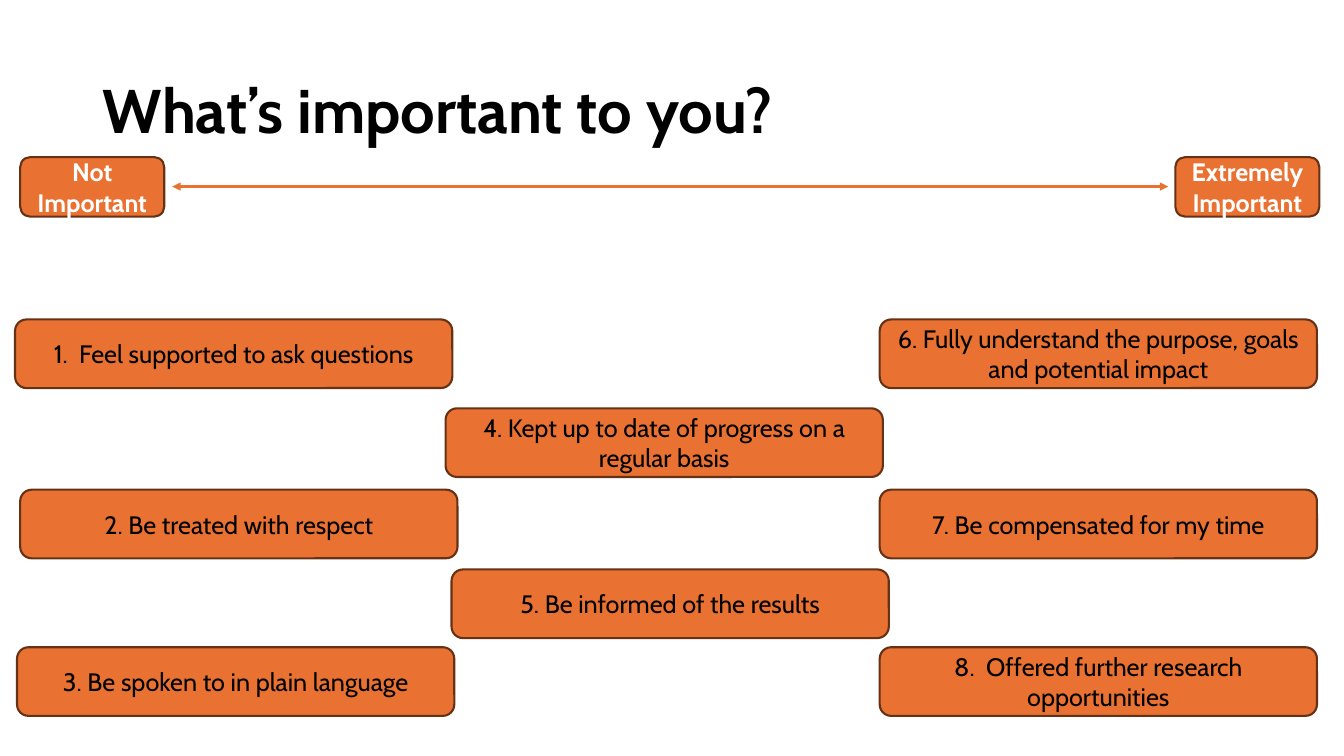
"""Build the slide that ranks eight priorities on an importance scale."""
from lxml.etree import SubElement
from pptx import Presentation
from pptx.dml.color import RGBColor
from pptx.enum.shapes import MSO_CONNECTOR, MSO_SHAPE
from pptx.enum.text import MSO_ANCHOR, PP_ALIGN
from pptx.oxml.ns import qn
from pptx.util import Cm, Pt

COLOURS = {"orange": "E97132", "brown": "663216", "black": "000000", "white": "FFFFFF"}


class SlideBuilder:
    font = "Cabin"
    line_width = Pt(1.5)

    def __init__(self, slide):
        self.slide = slide

    def colour(self, name):
        return RGBColor.from_string(COLOURS[name])

    def add_text(self, shape, text, size, colour, bold, alignment):
        frame = shape.text_frame
        frame.word_wrap = True
        frame.vertical_anchor = MSO_ANCHOR.MIDDLE
        paragraph = frame.paragraphs[0]
        paragraph.alignment = alignment
        run = paragraph.add_run()
        run.text = text
        run.font.name = self.font
        run.font.size = Pt(size)
        run.font.bold = bold
        run.font.color.rgb = self.colour(colour)
        return paragraph

    def title(self, text, left, top, width, height):
        shape = self.slide.shapes.add_textbox(Cm(left), Cm(top), Cm(width), Cm(height))
        paragraph = self.add_text(shape, text, 44, "black", True, PP_ALIGN.LEFT)
        paragraph.line_spacing = 0.9

    def box(self, text, left, top, width, height, colour="black", bold=False):
        shape = self.slide.shapes.add_shape(
            MSO_SHAPE.ROUNDED_RECTANGLE, Cm(left), Cm(top), Cm(width), Cm(height))
        shape.shadow.inherit = False
        shape.fill.solid()
        shape.fill.fore_color.rgb = self.colour("orange")
        shape.line.color.rgb = self.colour("brown")
        shape.line.width = self.line_width
        self.add_text(shape, text, 18, colour, bold, PP_ALIGN.CENTER)

    def double_arrow(self, left, right, top):
        connector = self.slide.shapes.add_connector(
            MSO_CONNECTOR.STRAIGHT, Cm(left), Cm(top), Cm(right), Cm(top))
        connector.line.color.rgb = self.colour("orange")
        connector.line.width = self.line_width
        properties = connector.element.spPr
        outline = properties.find(qn("a:ln"))
        for end in ("a:headEnd", "a:tailEnd"):
            SubElement(outline, qn(end), type="triangle")
        SubElement(properties, qn("a:effectLst"))


def main():
    presentation = Presentation()
    presentation.slide_width, presentation.slide_height = Cm(33.87), Cm(19.05)
    builder = SlideBuilder(presentation.slides.add_slide(presentation.slide_layouts[6]))

    builder.title("What’s important to you?", 2.34, 1.02, 29.21, 3.68)
    builder.double_arrow(4.34, 29.44, 4.7)
    for text, left in (("Not Important", 0.51), ("Extremely Important", 29.62)):
        builder.box(text, left, 3.96, 3.63, 1.5, "white", True)

    outer_rows = (8.05, 12.34, 16.31)
    inner_rows = (10.29, 14.35)
    columns = (
        (outer_rows, (
            ("1.  Feel supported to ask questions", 0.38),
            ("2. Be treated with respect", 0.51),
            ("3. Be spoken to in plain language", 0.43))),
        (inner_rows, (
            ("4. Kept up to date of progress on a regular basis", 11.23),
            ("5. Be informed of the results", 11.38))),
        (outer_rows, (
            ("6. Fully understand the purpose, goals and potential impact", 22.17),
            ("7. Be compensated for my time", 22.17),
            ("8.  Offered further research opportunities", 22.17))),
    )
    for rows, priorities in columns:
        for top, (text, left) in zip(rows, priorities):
            builder.box(text, left, top, 11.02, 1.73)

    presentation.save("out.pptx")


if __name__ == "__main__":
    main()
